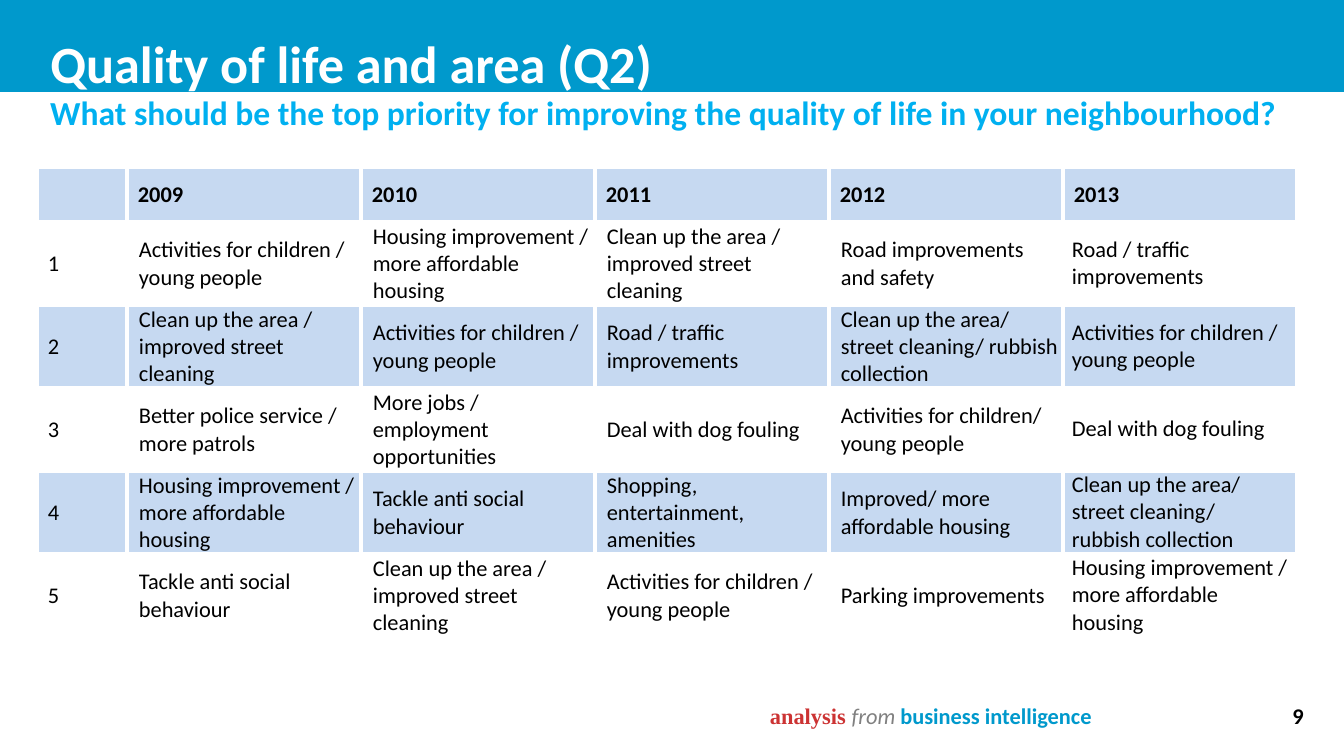
import pptx
import pptx.util
import pptx.dml.color
import pptx.enum.shapes
import pptx.enum.text
import pptx.oxml

PX = 914400 / 134.4
ALIGN = pptx.enum.text.PP_ALIGN
ANCHOR = pptx.enum.text.MSO_ANCHOR
NAMESPACE = "http://schemas.openxmlformats.org/drawingml/2006/main"


def color(value):
    return pptx.dml.color.RGBColor.from_string(value)


def add_span(para, text, size, value, bold=True, italic=False, font="Calibri"):
    span = para.add_run()
    span.text = text
    span.font.name = font
    span.font.size = pptx.util.Pt(size)
    span.font.bold = bold
    span.font.italic = italic
    span.font.color.rgb = color(value)


deck = pptx.Presentation()
deck.slide_width = round(1344 * PX)
deck.slide_height = round(756 * PX)
page = deck.slides.add_slide(deck.slide_layouts[5])

title = page.shapes.title
band = page.shapes.add_shape(
    pptx.enum.shapes.MSO_SHAPE.RECTANGLE, 0, 0, deck.slide_width, round(92 * PX)
)
band.shadow.inherit = False
band.fill.solid()
band.fill.fore_color.rgb = color("0099CC")
band.line.fill.background()
title.element.addprevious(band.element)

title.left, title.top, title.width, title.height = [
    round(length * PX) for length in (37, 22, 1270, 72)
]
title.text_frame.word_wrap = True
title.text_frame.auto_size = pptx.enum.text.MSO_AUTO_SIZE.NONE
title.text_frame.vertical_anchor = ANCHOR.BOTTOM
title.text_frame.margin_top = title.text_frame.margin_bottom = 0
para = title.text_frame.paragraphs[0]
para.alignment = ALIGN.LEFT
add_span(para, "Quality of life and area (Q2)", 28, "FFFFFF")

question = "What should be the top priority for improving the quality of life in your neighbourhood?"
text_boxes = [
    ((37, 92, 1270, 52), 0, ALIGN.LEFT, [(question, 18, "00B0F0")]),
    ((714, 695, 434, 40), 7, ALIGN.CENTER, [
        ("analysis ", 12, "CC3333", True, False, "Times New Roman"),
        ("from ", 12, "808080", False, True),
        ("business intelligence", 12, "0099CC"),
    ]),
    ((1004, 695, 313, 40), 7, ALIGN.RIGHT, [("9", 12, "000000")]),
]
for place, margin, alignment, spans in text_boxes:
    box = page.shapes.add_textbox(*[round(length * PX) for length in place])
    box.text_frame.word_wrap = True
    box.text_frame.margin_top = box.text_frame.margin_bottom = round(margin * PX)
    para = box.text_frame.paragraphs[0]
    para.alignment = alignment
    for span in spans:
        add_span(para, *span)

children = "Activities for children / young people"
street = "Clean up the area / improved street cleaning"
rubbish = "Clean up the area/ street cleaning/ rubbish collection"
housing = "Housing improvement / more affordable housing"
traffic = "Road / traffic improvements"
dogs = "Deal with dog fouling"
social = "Tackle anti social behaviour"
priorities = [
    ["", "2009", "2010", "2011", "2012", "2013"],
    ["1", children, housing, street, "Road improvements and safety", traffic],
    ["2", street, children, traffic, rubbish, children],
    ["3", "Better police service / more patrols", "More jobs / employment opportunities",
     dogs, "Activities for children/ young people", dogs],
    ["4", housing, social, "Shopping, entertainment, amenities",
     "Improved/ more affordable housing", rubbish],
    ["5", social, street, children, "Parking improvements", housing],
]
widths = [90] + [234] * 5
heights = [55] + [83] * 5
table = page.shapes.add_table(
    len(heights), len(widths), round(37 * PX), round(167 * PX),
    round(sum(widths) * PX), round(sum(heights) * PX)
).table
for column, width in zip(table.columns, widths):
    column.width = round(width * PX)
for row, height in zip(table.rows, heights):
    row.height = round(height * PX)

for row_index, texts in enumerate(priorities):
    for column_index, text in enumerate(texts):
        cell = table.cell(row_index, column_index)
        if row_index == 0 or column_index == 0:
            margins = (11, 1, 11, 0)
        elif column_index == 5:
            margins = (9, 0, 9, 0)
        else:
            margins = (12, 1, 1, 0)
        cell.margin_left, cell.margin_top, cell.margin_right, cell.margin_bottom = [
            round(margin * PX) for margin in margins
        ]
        cell.vertical_anchor = ANCHOR.MIDDLE
        properties = cell._tc.get_or_add_tcPr()
        for side in ("lnL", "lnR", "lnT", "lnB"):
            properties.append(pptx.oxml.parse_xml(
                f'<a:{side} xmlns:a="{NAMESPACE}" w="{pptx.util.Pt(2.25)}">'
                f'<a:solidFill><a:srgbClr val="FFFFFF"/></a:solidFill></a:{side}>'
            ))
        cell.fill.solid()
        cell.fill.fore_color.rgb = color("FFFFFF" if row_index % 2 else "C6D9F1")
        if text:
            add_span(cell.text_frame.paragraphs[0], text, 12, "000000", row_index == 0)

deck.save("out.pptx")
